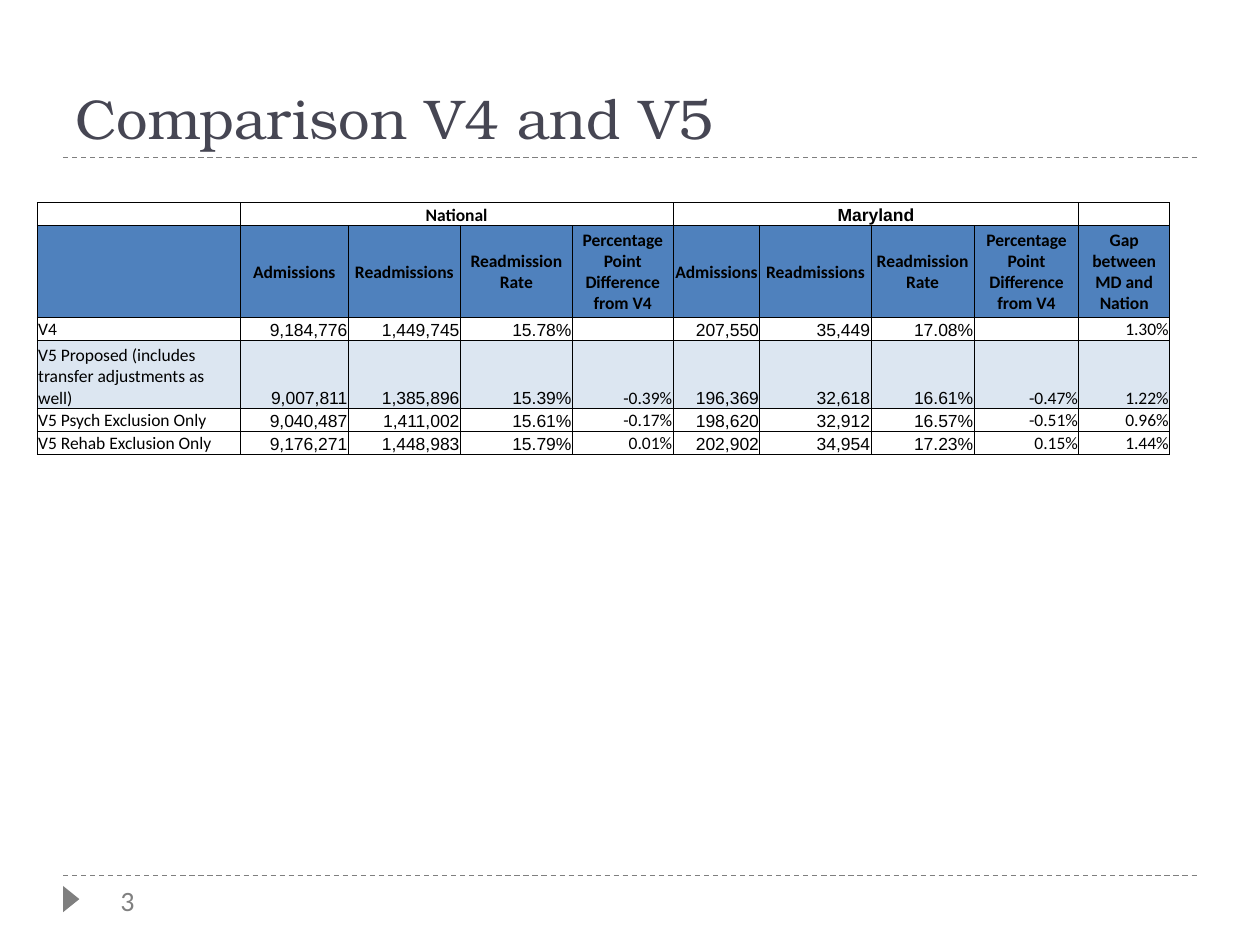
from dataclasses import dataclass
from typing import Any

from lxml.etree import SubElement
from pptx import Presentation
from pptx.dml.color import RGBColor
from pptx.enum.dml import MSO_LINE
from pptx.enum.shapes import MSO_CONNECTOR, MSO_SHAPE
from pptx.enum.text import MSO_ANCHOR, MSO_AUTO_SIZE, PP_ALIGN
from pptx.oxml.ns import qn
from pptx.util import Cm, Pt


@dataclass(frozen=True)
class Theme:
    title_color: RGBColor = RGBColor(0x46, 0x46, 0x53)
    rule_color: RGBColor = RGBColor(0x7F, 0x7F, 0x7F)
    number_color: RGBColor = RGBColor(0x80, 0x80, 0x80)
    ink: RGBColor = RGBColor(0, 0, 0)
    white: RGBColor = RGBColor(0xFF, 0xFF, 0xFF)
    header_fill: RGBColor = RGBColor(0x4F, 0x81, 0xBD)
    highlight_fill: RGBColor = RGBColor(0xDC, 0xE6, 0xF1)
    title_font: str = "TeX Gyre Bonum"
    body_font: str = "Calibri"
    figure_font: str = "Arial"
    title_size: Pt = Pt(32)
    number_size: Pt = Pt(16)
    table_size: Pt = Pt(10)
    rule_width: Pt = Pt(0.75)
    border_width: Pt = Pt(0.5)


@dataclass(frozen=True)
class Label:
    text: str
    box: tuple[float, float, float, float]
    font: dict[str, Any]
    frame: dict[str, Any]


@dataclass(frozen=True)
class Row:
    height: float
    cells: tuple[str, ...]
    fill: RGBColor
    header: bool = False
    anchor: Any = MSO_ANCHOR.BOTTOM


THEME = Theme()
MEASURES = ("Admissions", "Readmissions", "Readmission Rate",
            "Percentage Point Difference from V4")
COLUMNS = (4.09, 2.18, 2.26, 2.26, 2.03, 1.75, 2.24, 2.08, 2.11, 1.83)
FIGURE_COLUMNS = {1, 2, 3, 5, 6, 7}
GROUP_STARTS = (1, 5)
ROWS = (
    Row(0.46, ("", "National", "", "", "", "Maryland", "", "", "", ""),
        THEME.white, True),
    Row(1.85, ("", *MEASURES, *MEASURES, "Gap between MD and Nation"),
        THEME.header_fill, True, MSO_ANCHOR.MIDDLE),
    Row(0.46, ("V4", "9,184,776", "1,449,745", "15.78%", "",
               "207,550", "35,449", "17.08%", "", "1.30%"), THEME.white),
    Row(1.38, ("V5 Proposed (includes transfer adjustments as well)",
               "9,007,811", "1,385,896", "15.39%", "-0.39%",
               "196,369", "32,618", "16.61%", "-0.47%", "1.22%"),
        THEME.highlight_fill),
    Row(0.46, ("V5 Psych Exclusion Only",
               "9,040,487", "1,411,002", "15.61%", "-0.17%",
               "198,620", "32,912", "16.57%", "-0.51%", "0.96%"), THEME.white),
    Row(0.46, ("V5 Rehab Exclusion Only",
               "9,176,271", "1,448,983", "15.79%", "0.01%",
               "202,902", "34,954", "17.23%", "0.15%", "1.44%"), THEME.white),
)
LABELS = (
    Label("3", (2.18, 17.68, 1.19, 0.94),
          {"name": THEME.body_font, "size": THEME.number_size,
           "color": THEME.number_color},
          {"word_wrap": False, "auto_size": MSO_AUTO_SIZE.SHAPE_TO_FIT_TEXT}),
    Label("Comparison V4 and V5", (1.27, 0.43, 22.86, 2.74),
          {"name": THEME.title_font, "size": THEME.title_size,
           "color": THEME.title_color},
          {"word_wrap": True, "vertical_anchor": MSO_ANCHOR.BOTTOM}),
)


def set_font(font: Any, values: dict[str, Any]) -> None:
    for key, value in values.items():
        if key == "color":
            font.color.rgb = value
        else:
            setattr(font, key, value)


def add_rule(s: Any, y: float) -> None:
    sp = s.shapes.add_connector(MSO_CONNECTOR.STRAIGHT,
                                Cm(1.27), Cm(y), Cm(24.13), Cm(y))
    sp.line.color.rgb = THEME.rule_color
    sp.line.width = THEME.rule_width
    sp.line.dash_style = MSO_LINE.DASH
    SubElement(sp._element.spPr, qn("a:effectLst"))


def add_marker(s: Any) -> None:
    sp = s.shapes.add_shape(MSO_SHAPE.ISOSCELES_TRIANGLE,
                            Cm(1.17), Cm(17.96), Cm(0.53), Cm(0.33))
    sp.rotation = 90
    sp.shadow.inherit = False
    sp.fill.solid()
    sp.fill.fore_color.rgb = THEME.rule_color
    sp.line.fill.background()


def add_label(s: Any, label: Label) -> None:
    tf = s.shapes.add_textbox(*map(Cm, label.box)).text_frame
    for key, value in label.frame.items():
        setattr(tf, key, value)
    r = tf.paragraphs[0].add_run()
    r.text = label.text
    set_font(r.font, label.font)


def add_borders(cell: Any) -> None:
    tc_pr = cell._tc.get_or_add_tcPr()
    for side in ("lnL", "lnR", "lnT", "lnB"):
        ln = SubElement(tc_pr, qn(f"a:{side}"), w=str(THEME.border_width))
        fill = SubElement(ln, qn("a:solidFill"))
        SubElement(fill, qn("a:srgbClr"), val=str(THEME.ink))


def fill_cell(cell: Any, row: Row, col: int) -> None:
    add_borders(cell)
    values = {"margin_left": Cm(0.02), "margin_right": Cm(0.02),
              "margin_top": Cm(0.02), "margin_bottom": Cm(0),
              "vertical_anchor": row.anchor}
    for key, value in values.items():
        setattr(cell, key, value)
    cell.fill.solid()
    cell.fill.fore_color.rgb = row.fill
    p = cell.text_frame.paragraphs[0]
    text = row.cells[col]
    if not text:
        SubElement(p._p, qn("a:endParaRPr"), sz=str(int(THEME.table_size.pt * 100)))
        return
    if row.header:
        p.alignment = PP_ALIGN.CENTER
    else:
        p.alignment = PP_ALIGN.RIGHT if col else PP_ALIGN.LEFT
    is_figure = not row.header and col in FIGURE_COLUMNS
    r = p.add_run()
    r.text = text
    set_font(r.font, {
        "name": THEME.figure_font if is_figure or text == "Maryland" else THEME.body_font,
        "size": THEME.table_size, "bold": row.header, "color": THEME.ink})


def add_comparison(s: Any) -> None:
    table = s.shapes.add_table(
        len(ROWS), len(COLUMNS), Cm(0.75), Cm(4.09),
        Cm(sum(COLUMNS)), Cm(sum(row.height for row in ROWS))).table
    table.first_row = table.horz_banding = False
    for column, width in zip(table.columns, COLUMNS):
        column.width = Cm(width)
    for i, row in enumerate(ROWS):
        table.rows[i].height = Cm(row.height)
        for col in range(len(COLUMNS)):
            fill_cell(table.cell(i, col), row, col)
    for start in GROUP_STARTS:
        table.cell(0, start).merge(table.cell(0, start + len(MEASURES) - 1))


def main() -> None:
    prs = Presentation()
    prs.slide_width, prs.slide_height = Cm(25.4), Cm(19.05)
    s = prs.slides.add_slide(prs.slide_layouts[6])
    for y in (17.65, 3.17):
        add_rule(s, y)
    add_marker(s)
    for label in LABELS:
        add_label(s, label)
    add_comparison(s)
    prs.save("out.pptx")


if __name__ == "__main__":
    main()
